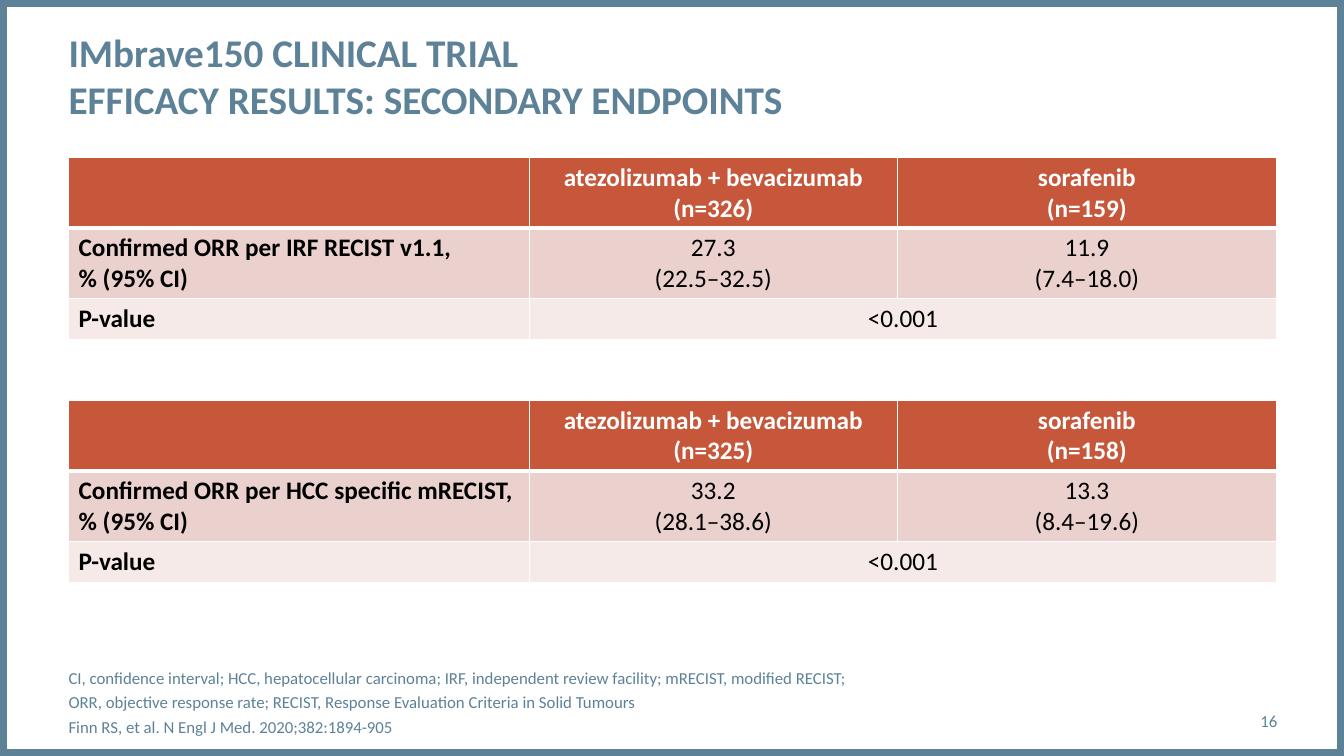
"""Build the IMbrave150 secondary endpoints slide."""
from pptx import Presentation
from pptx.dml.color import RGBColor
from pptx.enum.shapes import MSO_SHAPE
from pptx.enum.text import MSO_ANCHOR as ANCHOR, PP_ALIGN as ALIGN
from pptx.oxml import parse_xml
from pptx.oxml.ns import nsdecls
from pptx.util import Inches, Pt

BLUE, RUST, WHITE, BLACK = "5D8298", "C6573B", "FFFFFF", "000000"
ROW_FILLS = [RUST, "EAD1CE", "F5EAE8"]
LEFT = 0.68


def rgb(value):
    return RGBColor.from_string(value)


def write(tf, text, size=18, color=BLUE, bold=False, align=ALIGN.LEFT, gap=0):
    tf.word_wrap = True
    for i, line in enumerate(text.split("\n")):
        p = tf.add_paragraph() if i else tf.paragraphs[0]
        p.text = line
        p.alignment = align
        if i and gap:
            p.space_before = Pt(gap)
        for r in p.runs:
            r.font.name, r.font.size, r.font.bold = "Calibri", Pt(size), bold
            r.font.color.rgb = rgb(color)


prs = Presentation()
prs.slide_width, prs.slide_height = Inches(13.33), Inches(7.5)
s = prs.slides.add_slide(prs.slide_layouts[6])

frame = s.shapes.add_shape(MSO_SHAPE.RECTANGLE, 0, 0, prs.slide_width, prs.slide_height)
frame.shadow.inherit = False
frame.fill.background()
frame.line.color.rgb = rgb(BLUE)
frame.line.width = Pt(10)

texts = [
    ((LEFT, 0.28, 9.56, 0.94), ANCHOR.TOP,
     "IMbrave150 CLINICAL TRIAL\vEFFICACY RESULTS: SECONDARY ENDPOINTS",
     dict(size=28, bold=True)),
    ((11.5, 6.95, 1.17, 0.4), ANCHOR.MIDDLE, "16", dict(size=12, align=ALIGN.RIGHT)),
    ((LEFT, 6.58, 11.5, 0.77), ANCHOR.MIDDLE,
     "CI, confidence interval; HCC, hepatocellular carcinoma; IRF, independent review facility; "
     "mRECIST, modified RECIST;\n"
     "ORR, objective response rate; RECIST, Response Evaluation Criteria in Solid Tumours\n"
     "Finn RS, et al. N Engl J Med. 2020;382:1894-905",
     dict(size=12, gap=3)),
]
for box, anchor, text, style in texts:
    tf = s.shapes.add_textbox(*map(Inches, box)).text_frame
    tf.margin_left = tf.margin_top = tf.margin_right = tf.margin_bottom = 0
    tf.vertical_anchor = anchor
    write(tf, text, **style)

tables = [
    (1.56, [
        ["", "atezolizumab + bevacizumab (n=326)", "sorafenib\n(n=159)"],
        ["Confirmed ORR per IRF RECIST v1.1,\v% (95% CI)", "27.3\v(22.5–32.5)", "11.9\v(7.4–18.0)"],
        ["P-value", "<0.001", ""],
    ]),
    (3.97, [
        ["", "atezolizumab + bevacizumab (n=325)", "sorafenib\n(n=158)"],
        ["Confirmed ORR per HCC specific mRECIST,\v% (95% CI)", "33.2\v(28.1–38.6)", "13.3\n(8.4–19.6)"],
        ["P-value", "<0.001", ""],
    ]),
]
for top, rows in tables:
    table = s.shapes.add_table(3, 3, Inches(LEFT), Inches(top), Inches(11.98), Inches(1.81)).table
    for column, width in zip(table.columns, [4.57, 3.65, 3.76]):
        column.width = Inches(width)
    for row, height in zip(table.rows, [0.7, 0.7, 0.41]):
        row.height = Inches(height)
    table.cell(2, 1).merge(table.cell(2, 2))
    for i, row in enumerate(rows):
        for j, text in enumerate(row):
            cell = table.cell(i, j)
            cell.vertical_anchor = ANCHOR.MIDDLE if j else ANCHOR.TOP
            if text:
                write(cell.text_frame, text, color=BLACK if i else WHITE,
                      bold=i == 0 or j == 0, align=ALIGN.CENTER if j else ALIGN.LEFT)
            tc_pr = cell._tc.get_or_add_tcPr()
            for side in "LRTB":
                thick = (i, side) in [(0, "B"), (1, "T")]
                tc_pr.append(parse_xml(
                    f'<a:ln{side} {nsdecls("a")} w="{Pt(3 if thick else 1)}"><a:solidFill>'
                    f'<a:srgbClr val="{WHITE}"/></a:solidFill></a:ln{side}>'))
            cell.fill.solid()
            cell.fill.fore_color.rgb = rgb(ROW_FILLS[i])

prs.save("out.pptx")
